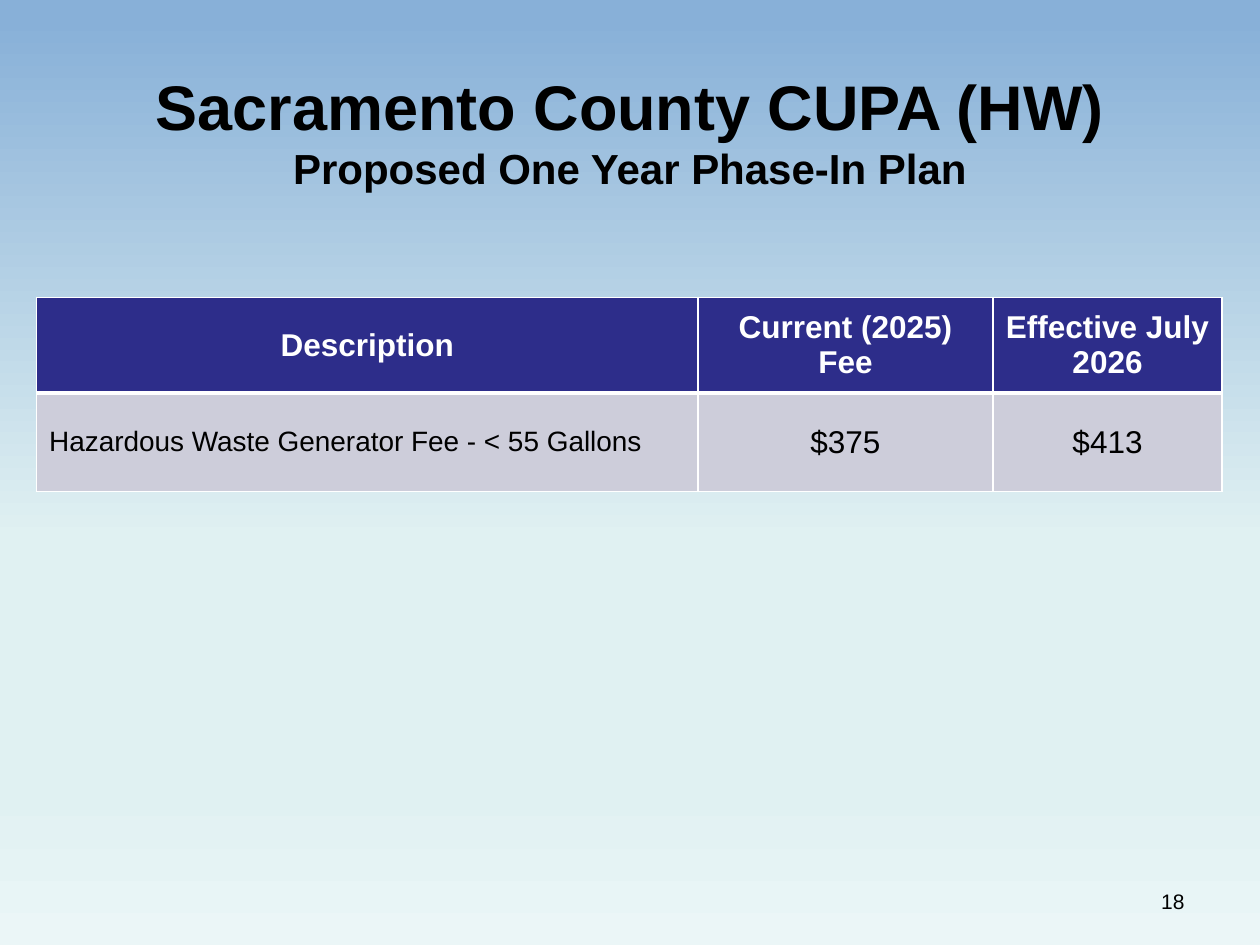
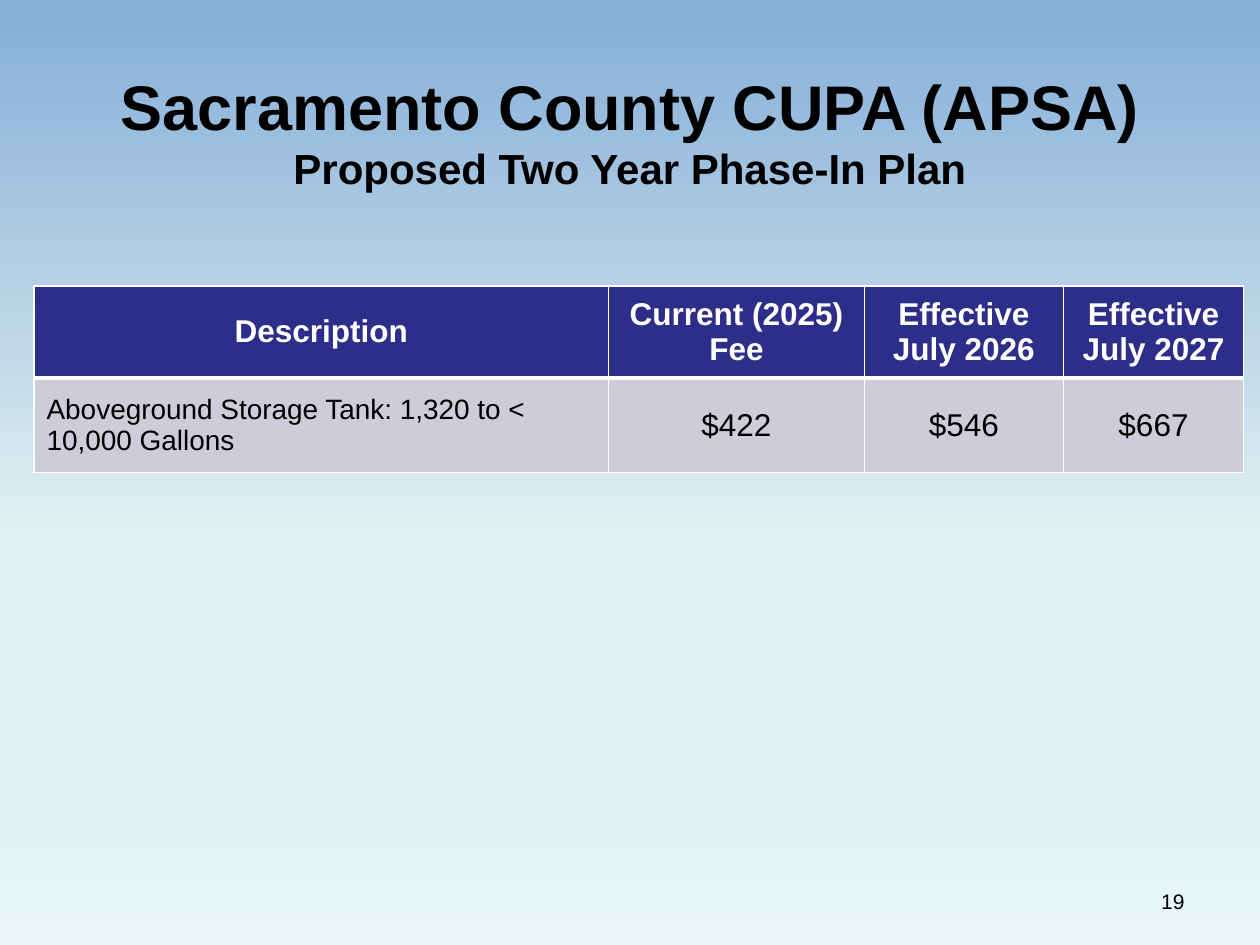
from dataclasses import dataclass

from lxml.etree import SubElement
from pptx import Presentation
from pptx.dml.color import RGBColor
from pptx.enum.text import MSO_ANCHOR, MSO_AUTO_SIZE, PP_ALIGN
from pptx.oxml.ns import qn
from pptx.presentation import Presentation as Deck
from pptx.slide import Slide
from pptx.table import _Cell as Cell
from pptx.text.text import _Paragraph as Paragraph
from pptx.util import Emu, Inches, Pt

COLORS = {
    "text": "000000",
    "white": "FFFFFF",
    "header": "2D2D8A",
    "body": "CDCDDA",
    "sky": "88B0D8",
    "mist": "E0F1F2",
    "haze": "EBF6F7",
}
BACKGROUND_STOPS = ((0, "sky"), (2, "sky"), (57, "mist"), (83, "mist"), (100, "haze"))
FONT = "Arial"
SLIDE_WIDTH, SLIDE_HEIGHT = Inches(10), Inches(7.5)
GRID_COLUMNS, GRID_ROWS = 100, 75
THIN, THICK = 1, 3


@dataclass(frozen=True)
class Area:
    column: float
    row: float
    columns: float
    rows: float

    def box(self) -> tuple[Emu, Emu, Emu, Emu]:
        return across(self.column), down(self.row), across(self.columns), down(self.rows)


@dataclass(frozen=True)
class FeePlan:
    number: int
    program: str
    phase: str
    column: float
    row: float
    widths: tuple[float, ...]
    heights: tuple[float, float]
    headings: tuple[str, ...]
    fees: tuple[str, ...]


TITLE_AREA = Area(5, 4.1, 90, 12.5)
NUMBER_AREA = Area(71.7, 70, 23.3, 3.4)
HEADINGS = ("Description", "Current (2025) Fee", "Effective July 2026")

PLANS = (
    FeePlan(
        18, "Sacramento County CUPA (HW)", "Proposed One Year Phase-In Plan",
        2.9, 23.6, (52.5, 23.4, 18.2), (7.6, 7.8), HEADINGS,
        ("Hazardous Waste Generator Fee - < 55 Gallons", "$375", "$413"),
    ),
    FeePlan(
        19, "Sacramento County CUPA (APSA)", "Proposed Two Year Phase-In Plan",
        2.7, 22.7, (45.6, 20.3, 15.8, 14.3), (7.3, 7.5),
        HEADINGS + ("Effective July 2027",),
        ("Aboveground Storage Tank: 1,320 to < 10,000 Gallons", "$422", "$546", "$667"),
    ),
)


def across(columns: float) -> Emu:
    return Emu(round(SLIDE_WIDTH * columns / GRID_COLUMNS))


def down(rows: float) -> Emu:
    return Emu(round(SLIDE_HEIGHT * rows / GRID_ROWS))


def add_span(para: Paragraph, text: str, size: int, color: str = "text", bold: bool = False) -> None:
    span = para.add_run()
    span.text = text
    span.font.name = FONT
    span.font.size = Pt(size)
    span.font.bold = bold
    span.font.color.rgb = RGBColor.from_string(COLORS[color])


def paint_background(deck: Deck) -> None:
    background = deck.slide_master.background
    background.fill.gradient()
    background.fill.gradient_angle = 270
    stops = next(background._cSld.iter(qn("a:gsLst")))
    for stop in list(stops):
        stops.remove(stop)
    for percent, color in BACKGROUND_STOPS:
        stop = SubElement(stops, qn("a:gs"), pos=str(percent * 1000))
        SubElement(stop, qn("a:srgbClr"), val=COLORS[color])


def add_title(page: Slide, program: str, phase: str) -> None:
    title = page.shapes.title
    title.left, title.top, title.width, title.height = TITLE_AREA.box()
    frame = title.text_frame
    frame.auto_size = MSO_AUTO_SIZE.NONE
    frame.word_wrap = True
    frame.vertical_anchor = MSO_ANCHOR.MIDDLE
    para = frame.paragraphs[0]
    para.alignment = PP_ALIGN.CENTER
    add_span(para, program, 36, bold=True)
    para.add_line_break()
    add_span(para, phase, 24, bold=True)


def add_number(page: Slide, number: int) -> None:
    frame = page.shapes.add_textbox(*NUMBER_AREA.box()).text_frame
    frame.word_wrap = True
    para = frame.paragraphs[0]
    para.alignment = PP_ALIGN.RIGHT
    add_span(para, str(number), 12)


def add_borders(cell: Cell, top: int, bottom: int) -> None:
    properties = cell._tc.get_or_add_tcPr()
    sides = (("a:lnL", THIN), ("a:lnR", THIN), ("a:lnT", top), ("a:lnB", bottom))
    for position, (side, points) in enumerate(sides):
        line = SubElement(properties, qn(side), w=str(Pt(points)))
        fill = SubElement(line, qn("a:solidFill"))
        SubElement(fill, qn("a:srgbClr"), val=COLORS["white"])
        properties.insert(position, line)


def fill_cell(cell: Cell, text: str, is_header: bool, is_description: bool) -> None:
    cell.fill.solid()
    cell.fill.fore_color.rgb = RGBColor.from_string(COLORS["header" if is_header else "body"])
    cell.vertical_anchor = MSO_ANCHOR.MIDDLE
    para = cell.text_frame.paragraphs[0]
    left_aligned = is_description and not is_header
    para.alignment = PP_ALIGN.LEFT if left_aligned else PP_ALIGN.CENTER
    add_span(para, text, 16 if left_aligned else 18, "white" if is_header else "text", is_header)
    add_borders(cell, *((THIN, THICK) if is_header else (THICK, THIN)))


def add_fee_table(page: Slide, plan: FeePlan) -> None:
    area = Area(plan.column, plan.row, sum(plan.widths), sum(plan.heights))
    table = page.shapes.add_table(len(plan.heights), len(plan.widths), *area.box()).table
    for column, width in zip(table.columns, plan.widths):
        column.width = across(width)
    for row, height in zip(table.rows, plan.heights):
        row.height = down(height)
    for row_index, texts in enumerate((plan.headings, plan.fees)):
        for column_index, text in enumerate(texts):
            fill_cell(table.cell(row_index, column_index), text, row_index == 0, column_index == 0)


def add_plan_slide(deck: Deck, plan: FeePlan) -> None:
    page = deck.slides.add_slide(deck.slide_layouts.get_by_name("Title Only"))
    add_title(page, plan.program, plan.phase)
    add_number(page, plan.number)
    add_fee_table(page, plan)


def main() -> None:
    deck = Presentation()
    deck.slide_width, deck.slide_height = SLIDE_WIDTH, SLIDE_HEIGHT
    paint_background(deck)
    for plan in PLANS:
        add_plan_slide(deck, plan)
    deck.save("out.pptx")


if __name__ == "__main__":
    main()
